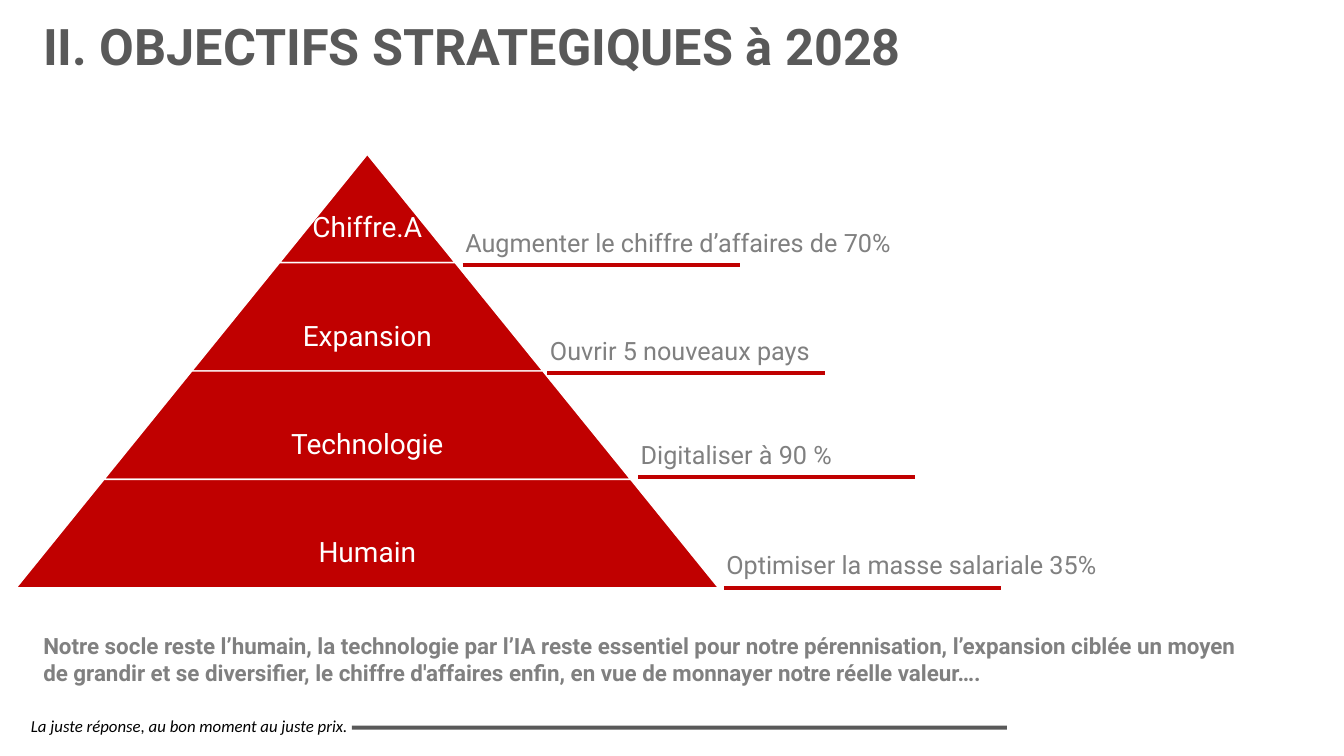
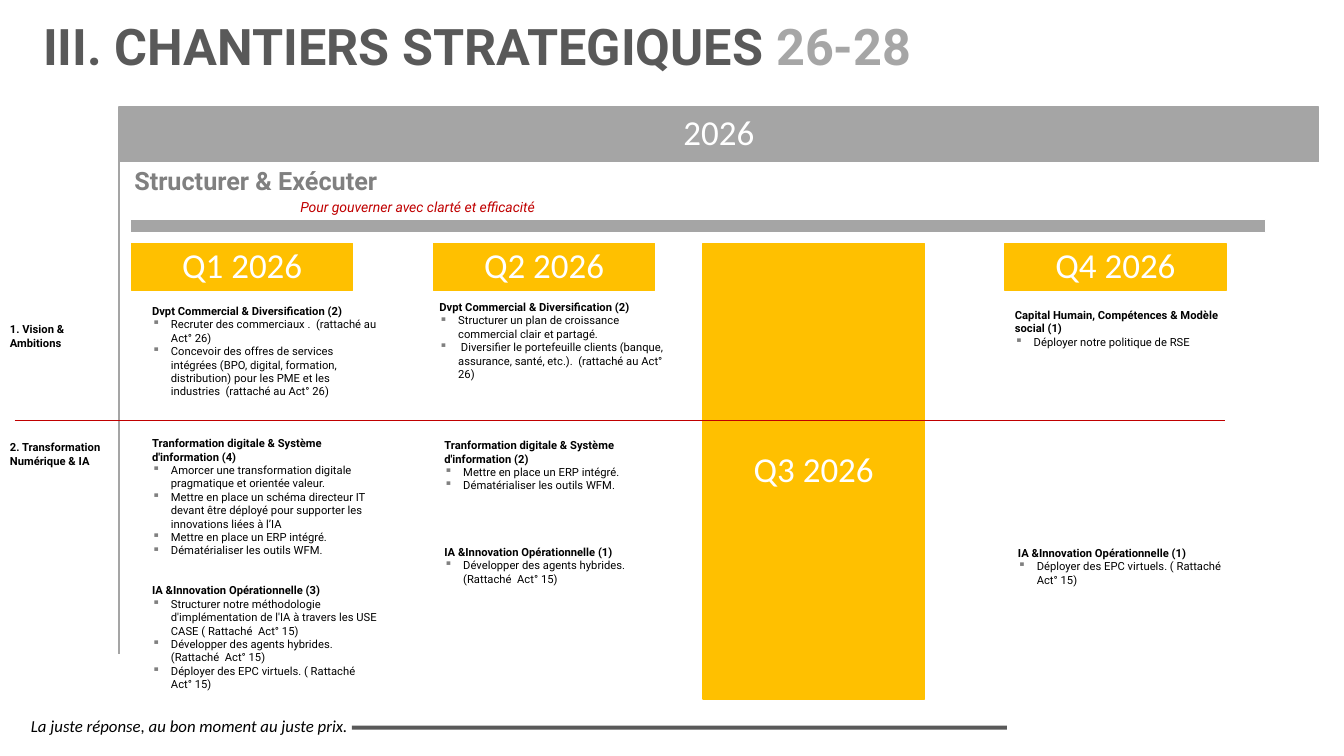
from dataclasses import dataclass
from typing import Any, NamedTuple

from lxml import etree
from pptx import Presentation
from pptx import slide as sl
from pptx import util as u
from pptx.dml import color
from pptx.enum import shapes, text
from pptx.oxml import ns
from pptx.shapes import autoshape

RGB = color.RGBColor
DARK = RGB(0x59, 0x59, 0x59)
GREY = RGB(0x80, 0x80, 0x80)
LIGHT = RGB(0xA6, 0xA6, 0xA6)
BAND = RGB(0xA5, 0xA5, 0xA5)
RED = RGB(0xC0, 0x00, 0x00)
AMBER = RGB(0xFF, 0xC0, 0x00)
BLACK = RGB(0x00, 0x00, 0x00)
WHITE = RGB(0xFF, 0xFF, 0xFF)

CENTER = text.PP_ALIGN.CENTER


@dataclass(frozen=True)
class Style:
    size: float
    color: RGB
    name: str = "Roboto"
    bold: bool = False
    italic: bool = False

    def font(self) -> dict[str, Any]:
        return {"name": self.name, "size": u.Pt(self.size),
                "bold": self.bold, "italic": self.italic}


TITLE = Style(36, DARK, bold=True)
TITLE_LIGHT = Style(36, LIGHT, bold=True)
FOOTER = Style(12, BLACK, "Calibri", italic=True)
LEVEL = Style(20, WHITE)
GOAL = Style(18, GREY)
SUMMARY = Style(16, GREY, bold=True)
THEME = Style(18, GREY, bold=True)
MOTTO = Style(10, RED, italic=True)
BANNER = Style(25, WHITE, "Calibri")
HEADING = Style(8, BLACK, bold=True)
ITEM = Style(8, BLACK)


class Box(NamedTuple):
    x: float
    y: float
    w: float
    h: float

    def lengths(self) -> list[u.Length]:
        return [u.Pt(v) for v in self]


class Goal(NamedTuple):
    level: str
    label: str
    x: float
    y: float


class Quarter(NamedTuple):
    label: str
    x: float
    h: float


class Section(NamedTuple):
    heading: str
    items: list[str]
    gap: float = 0


class Block(NamedTuple):
    x: float
    y: float
    h: float
    sections: list[Section]


# Drawing helpers
def set_all(obj: Any, values: dict[str, Any]) -> None:
    for key, value in values.items():
        setattr(obj, key, value)


def add_run(p: Any, words: str, style: Style) -> None:
    r = p.add_run()
    r.text = words
    set_all(r.font, style.font())
    r.font.color.rgb = style.color


def add_text(s: sl.Slide, box: Box, *runs: tuple[str, Style], **para: Any) -> Any:
    tf = s.shapes.add_textbox(*box.lengths()).text_frame
    tf.word_wrap = True
    p = tf.paragraphs[0]
    set_all(p, para)
    for words, style in runs:
        add_run(p, words, style)
    return tf


def paint(sp: autoshape.Shape, fill: RGB, line: RGB | None) -> None:
    sp.shadow.inherit = False
    sp.fill.solid()
    sp.fill.fore_color.rgb = fill
    if line is None:
        sp.line.fill.background()
    else:
        sp.line.color.rgb = line
        sp.line.width = u.Pt(1)


def add_label(sp: autoshape.Shape, words: str, style: Style, top: float = 5) -> None:
    tf = sp.text_frame
    set_all(tf, {"word_wrap": True, "vertical_anchor": text.MSO_ANCHOR.MIDDLE,
                 "margin_left": u.Pt(5), "margin_right": u.Pt(5),
                 "margin_top": u.Pt(top), "margin_bottom": u.Pt(5)})
    p = tf.paragraphs[0]
    set_all(p, {"alignment": CENTER, "line_spacing": 0.9})
    add_run(p, words, style)


def add_rect(s: sl.Slide, box: Box, fill: RGB, line: RGB | None = None) -> autoshape.Shape:
    sp = s.shapes.add_shape(shapes.MSO_SHAPE.RECTANGLE, *box.lengths())
    paint(sp, fill, line)
    return sp


def add_line(s: sl.Slide, x1: float, y1: float, x2: float, y2: float,
             rgb: RGB, width: float) -> None:
    ends = [u.Pt(v) for v in (x1, y1, x2, y2)]
    sp = s.shapes.add_connector(shapes.MSO_CONNECTOR.STRAIGHT, *ends)
    sp.line.color.rgb = rgb
    sp.line.width = u.Pt(width)
    etree.SubElement(sp._element.spPr, ns.qn("a:effectLst"))


def add_bullet(p: Any) -> None:
    pPr = p._p.get_or_add_pPr()
    pPr.set("marL", str(u.Pt(13.5)))
    pPr.set("indent", str(-u.Pt(13.5)))
    clr = etree.SubElement(pPr, ns.qn("a:buClr"))
    etree.SubElement(clr, ns.qn("a:srgbClr")).set("val", str(GREY))
    etree.SubElement(pPr, ns.qn("a:buChar")).set("char", "▪")


def add_block(s: sl.Slide, block: Block) -> None:
    first, *others = block.sections
    tf = add_text(s, Box(block.x, block.y, 178.5, block.h), (first.heading, HEADING))
    for section in (first, *others):
        if section is not first:
            p = tf.add_paragraph()
            p.space_before = u.Pt(section.gap)
            add_run(p, section.heading, HEADING)
        for item in section.items:
            p = tf.add_paragraph()
            add_bullet(p)
            add_run(p, item, ITEM)


def add_slide(prs: Any, *title: tuple[str, Style]) -> sl.Slide:
    """Blank slide with the shared footer and title."""
    s = prs.slides.add_slide(prs.slide_layouts[6])
    add_rect(s, Box(251.3, 518.4, 468, 2.9), DARK)
    add_text(s, Box(7.9, 507.6, 254.9, 21.6),
             ("La juste réponse, au bon moment au juste prix.", FOOTER), alignment=CENTER)
    add_text(s, Box(23.8, 12.2, 839.5, 44.6), *title, line_spacing=0.9)
    return s


# Content
GOALS = [
    Goal("Chiffre.A", "Augmenter le chiffre d’affaires de 70%", 330.5, 189.4),
    Goal("Expansion", "Ouvrir 5 nouveaux pays", 391, 266.6),
    Goal("Technologie", "Digitaliser à 90 %", 455.8, 340.6),
    Goal("Humain", "Optimiser la masse salariale 35%", 517, 419.8),
]
CLOSING = ("Notre socle reste l’humain, la technologie par l’IA reste essentiel pour notre "
           "pérennisation, l’expansion ciblée un moyen de grandir et se diversifier, le chiffre "
           "d'affaires enfin, en vue de monnayer notre réelle valeur….")

QUARTERS = [
    Quarter("Q1 2026", 94, 33.5),
    Quarter("Q2 2026", 309.6, 33.5),
    Quarter("Q3 2026", 502.2, 325.5),
    Quarter("Q4 2026", 717.8, 33.5),
]
AXES = [("1. Vision & Ambitions", 226.8), ("2. Transformation Numérique & IA", 311.3)]

SALES = "Dvpt Commercial & Diversification (2)"
DIGITAL = "Tranformation digitale & Système d'information"
AI = "IA &Innovation Opérationnelle"
ERP = ["Mettre en place un ERP intégré.", "Dématérialiser les outils WFM."]
AGENTS = "Développer des agents hybrides.  (Rattaché  Act° 15)"
EPC = "Déployer des EPC virtuels. ( Rattaché  Act° 15)"
BLOCKS = [
    Block(101.5, 213.8, 75, [Section(SALES, [
        "Recruter des commerciaux .  (rattaché au Act° 26)",
        "Concevoir des offres de services intégrées (BPO, digital, formation, distribution) "
        "pour les PME et les industries  (rattaché au Act° 26)"])]),
    Block(306.7, 211, 65.5, [Section(SALES, [
        "Structurer un plan de croissance commercial clair et partagé.",
        " Diversifier le portefeuille clients (banque, assurance, santé, etc.).  "
        "(rattaché au Act° 26)"])]),
    Block(717.8, 216.7, 36, [Section("Capital Humain, Compétences & Modèle social (1)", [
        "Déployer notre politique de RSE"])]),
    Block(101.5, 308.2, 211, [
        Section(f"{DIGITAL} (4)", [
            "Amorcer une transformation digitale pragmatique et orientée valeur.",
            "Mettre en place un schéma directeur IT devant être déployé pour supporter les "
            "innovations liées à l’IA", *ERP]),
        Section(f"{AI} (3)", [
            "Structurer notre méthodologie d'implémentation de l'IA à travers les USE CASE "
            "( Rattaché  Act° 15)", AGENTS, EPC], gap=19)]),
    Block(310.3, 309.6, 113.8, [Section(f"{DIGITAL} (2)", ERP),
                                Section(f"{AI} (1)", [AGENTS], gap=38)]),
    Block(720, 386.6, 36, [Section(f"{AI} (1)", [EPC])]),
]


# Slides
def objectives(prs: Any) -> None:
    s = add_slide(prs, ("II. OBJECTIFS STRATEGIQUES à 2028", TITLE))
    apex_x, apex_y, level_h, step = 262.4, 110.2, 77.4, 62.7

    # Pyramid levels
    for i, goal in enumerate(GOALS):
        top, bottom = apex_y + i * level_h, apex_y + (i + 1) * level_h
        upper, lower = i * step, (i + 1) * step
        corners = [(apex_x - lower, bottom), (apex_x - upper, top),
                   (apex_x + upper, top), (apex_x + lower, bottom)]
        points = [(u.Pt(x), u.Pt(y)) for x, y in corners]
        fb = s.shapes.build_freeform(*points[0])
        fb.add_line_segments(points[1:], close=True)
        sp = fb.convert_to_shape()
        paint(sp, RED, WHITE)
        add_label(sp, goal.level, LEVEL, top=34)

    # Underlined goals
    for goal in GOALS:
        add_text(s, Box(goal.x - 5.2, goal.y - 30.6, 333.4, 28.8), (goal.label, GOAL))
        add_line(s, goal.x, goal.y, goal.x + 198, goal.y, RED, 3)
    add_text(s, Box(23.8, 447.8, 874, 46), (CLOSING, SUMMARY))


def workstreams(prs: Any) -> None:
    s = add_slide(prs, ("III. CHANTIERS STRATEGIQUES ", TITLE), ("26-28", TITLE_LIGHT))

    # Year frame
    add_line(s, 85, 115.2, 85, 467, BAND, 1)
    add_rect(s, Box(93, 156.9, 811, 9.2), BAND, WHITE)
    add_label(add_rect(s, Box(85, 76.6, 857, 39), BAND, BAND), "2026", BANNER)
    add_text(s, Box(88.9, 114.5, 808.6, 51), ("Structurer & Exécuter", THEME))
    add_text(s, Box(207.4, 138.2, 216, 19.4),
             ("Pour gouverner avec clarté et efficacité", MOTTO))

    # Quarters, axes and projects
    for q in QUARTERS:
        sp = add_rect(s, Box(q.x, 173.9, 158, q.h), AMBER, AMBER)
        add_label(sp, q.label, BANNER)
    for words, y in AXES:
        add_text(s, Box(0, y, 83.5, 26.6), (words, HEADING))
    for block in BLOCKS:
        add_block(s, block)
    add_line(s, 10.5, 300.4, 875.2, 300.4, RED, 0.5)


def main() -> None:
    prs = Presentation()
    set_all(prs, {"slide_width": u.Pt(960), "slide_height": u.Pt(540)})
    objectives(prs)
    workstreams(prs)
    prs.save("out.pptx")


if __name__ == "__main__":
    main()
